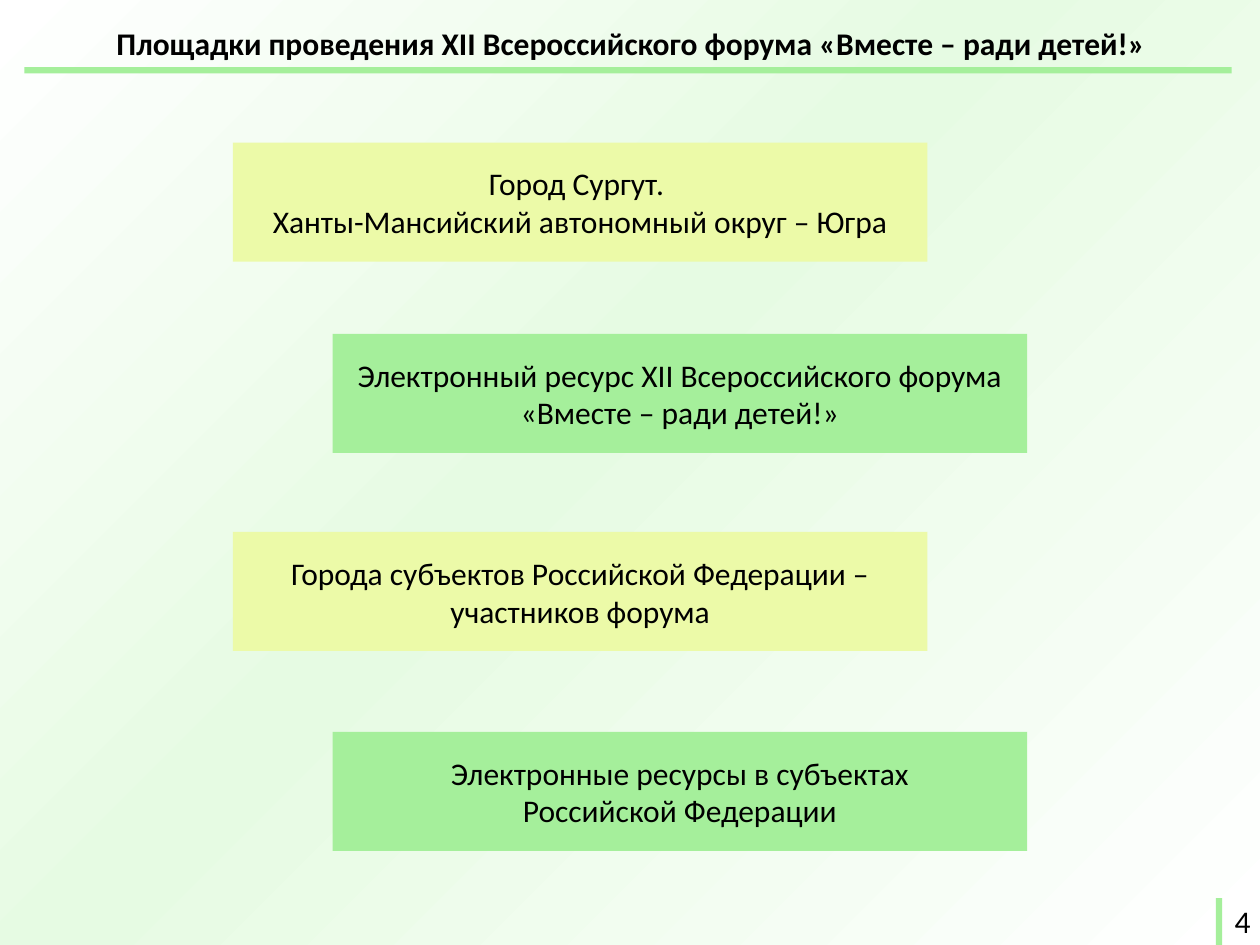
"""Build the slide listing the venues of the forum."""
from copy import deepcopy
from dataclasses import dataclass

from pptx import Presentation
from pptx.dml.color import RGBColor
from pptx.enum.shapes import MSO_SHAPE
from pptx.enum.text import MSO_ANCHOR, PP_ALIGN
from pptx.oxml.ns import qn
from pptx.util import Pt


@dataclass(frozen=True)
class Theme:
    font: str = "Calibri"
    size: int = 18
    ink: str = "000000"
    green: str = "A5EF9B"
    yellow: str = "ECFAA8"
    backdrop: tuple = ((0, "FFFFFF"), (0.45, "E6FBE3"), (1, "FFFFFF"))
    backdrop_angle: int = 315


def write(frame, text, theme, bold=False, align=PP_ALIGN.LEFT, anchor=MSO_ANCHOR.TOP, wrap=True):
    frame.word_wrap = wrap
    frame.vertical_anchor = anchor
    frame.text = text
    for paragraph in frame.paragraphs:
        paragraph.alignment = align
        font = paragraph.runs[0].font
        font.name, font.size, font.bold = theme.font, Pt(theme.size), bold
        font.color.rgb = RGBColor.from_string(theme.ink)


class SlideBuilder:
    def __init__(self, slide, theme):
        self.slide = slide
        self.theme = theme

    def backdrop(self):
        fill = self.slide.background.fill
        fill.gradient()
        fill.gradient_angle = self.theme.backdrop_angle
        stop_list = self.slide.element.find(".//" + qn("a:gsLst"))
        stop_list.append(deepcopy(stop_list[0]))
        for stop, (position, color) in zip(fill.gradient_stops, self.theme.backdrop):
            stop.position = position
            stop.color.rgb = RGBColor.from_string(color)

    def bar(self, left, top, width, height, color):
        bar = self.slide.shapes.add_shape(
            MSO_SHAPE.RECTANGLE, Pt(left), Pt(top), Pt(width), Pt(height))
        bar.shadow.inherit = False
        bar.fill.solid()
        bar.fill.fore_color.rgb = RGBColor.from_string(color)
        bar.line.fill.background()
        return bar

    def panel(self, left, top, width, height, color, text):
        panel = self.bar(left, top, width, height, color)
        write(panel.text_frame, text, self.theme,
              align=PP_ALIGN.CENTER, anchor=MSO_ANCHOR.MIDDLE)

    def label(self, left, top, width, height, text, **style):
        label = self.slide.shapes.add_textbox(Pt(left), Pt(top), Pt(width), Pt(height))
        write(label.text_frame, text, self.theme, **style)


def main():
    theme = Theme()
    deck = Presentation()
    deck.slide_width, deck.slide_height = Pt(720), Pt(540)
    builder = SlideBuilder(deck.slides.add_slide(deck.slide_layouts[6]), theme)

    builder.backdrop()
    builder.label(59.5, 10.3, 629, 29,
                  "Площадки проведения XII Всероссийского форума «Вместе – ради детей!»",
                  bold=True)
    builder.bar(13.9, 38.4, 690, 3.6, theme.green)

    yellow_column, green_column = (133, theme.yellow), (190, theme.green)
    venues = (
        (yellow_column, 81.5, "Город Сургут. \nХанты-Мансийский автономный округ – Югра"),
        (green_column, 190.8, "Электронный ресурс XII Всероссийского форума «Вместе – ради детей!»"),
        (yellow_column, 304, "Города субъектов Российской Федерации – участников форума"),
        (green_column, 418.2, "Электронные ресурсы в субъектах\nРоссийской Федерации"),
    )
    for (left, color), top, venue in venues:
        builder.panel(left, top, 397, 68, color, venue)

    builder.bar(694.8, 513.3, 3.6, 26.7, theme.green)
    builder.label(698.4, 512, 24, 29, "4", wrap=False)

    deck.save("out.pptx")


if __name__ == "__main__":
    main()
